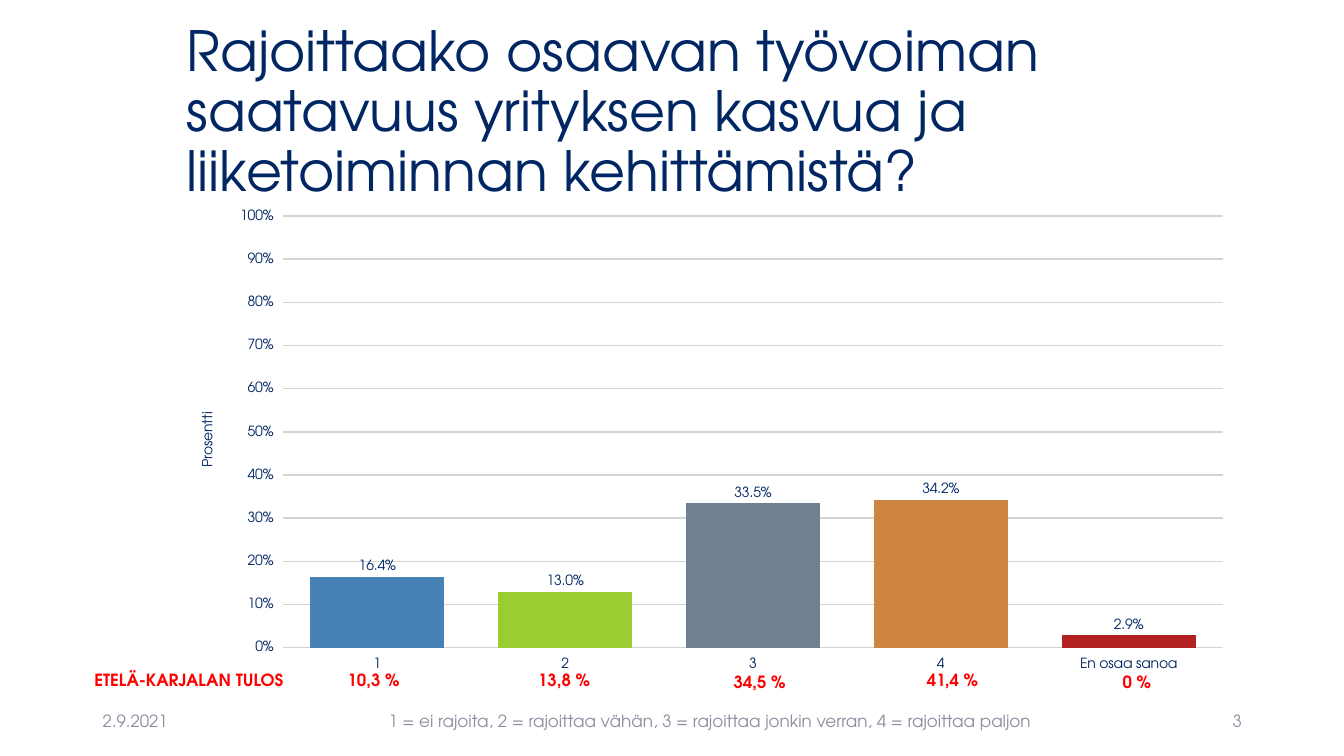
from lxml import etree
from pptx import Presentation
from pptx import util as u
from pptx.chart.data import CategoryChartData
from pptx.dml.color import RGBColor
from pptx.enum import chart as c
from pptx.enum import text as t
from pptx.oxml import ns

FONT = "TeX Gyre Adventor"
COLORS = {"navy": "002663", "footer": "8C8E9F", "result": "FF0000", "grid": "D3D3D3"}
BAR_COLORS = {
    "1": "4682B4",
    "2": "9ACD32",
    "3": "708090",
    "4": "CD853F",
    "En osaa sanoa": "B22222",
}
SHARES = (0.164, 0.13, 0.335, 0.342, 0.029)
REGIONAL_RESULTS = (
    ("ETELÄ-KARJALAN TULOS", 2.13, 16.76, 5.44),
    ("10,3 %", 8.51, 16.76, 2.06),
    ("13,8 %", 13.31, 16.74, 2.06),
    ("34,5 %", 18.24, 16.79, 2.06),
    ("41,4 %", 23.11, 16.74, 2.06),
    ("0 %", 28.04, 16.79, 2.06),
)
FOOTERS = (
    ("2.9.2021", 2.34, 7.62, t.PP_ALIGN.LEFT),
    (
        "1 = ei rajoita, 2 = rajoittaa vähän, 3 = rajoittaa jonkin verran, 4 = rajoittaa paljon",
        8.99, 17.81, t.PP_ALIGN.CENTER,
    ),
    ("3", 23.93, 7.62, t.PP_ALIGN.RIGHT),
)


def style_font(font, size, color, bold=False):
    font.name = FONT
    font.size = u.Pt(size)
    font.bold = bold
    font.color.rgb = RGBColor.from_string(color)


def set_title(slide, words):
    title = slide.shapes.title
    title.left, title.top = u.Cm(4.45), u.Cm(1.02)
    title.width, title.height = u.Cm(26.9), u.Cm(3.68)
    frame = title.text_frame
    frame.text = words
    frame.auto_size = t.MSO_AUTO_SIZE.NONE
    frame.vertical_anchor = t.MSO_ANCHOR.MIDDLE
    paragraph = frame.paragraphs[0]
    paragraph.alignment = t.PP_ALIGN.LEFT
    paragraph.line_spacing = 0.9
    style_font(paragraph.runs[0].font, 39.6, COLORS["navy"])


def add_label(slide, words, left, top, width, height, color, bold=False,
              alignment=t.PP_ALIGN.LEFT, anchor=t.MSO_ANCHOR.TOP):
    box = slide.shapes.add_textbox(u.Cm(left), u.Cm(top), u.Cm(width), u.Cm(height))
    frame = box.text_frame
    frame.word_wrap = True
    frame.vertical_anchor = anchor
    frame.text = words
    paragraph = frame.paragraphs[0]
    paragraph.alignment = alignment
    style_font(paragraph.runs[0].font, 12, color, bold)


def set_plot_layout(chart, **fractions):
    plot_area = chart.plots[0]._element.getparent()
    for old_layout in plot_area.findall(ns.qn("c:layout")):
        plot_area.remove(old_layout)
    layout = etree.Element(ns.qn("c:layout"))
    plot_area.insert(0, layout)
    manual = etree.SubElement(layout, ns.qn("c:manualLayout"))
    settings = {"layoutTarget": "inner", "xMode": "edge", "yMode": "edge", **fractions}
    for name, value in settings.items():
        etree.SubElement(manual, ns.qn(f"c:{name}")).set("val", str(value))


def style_axes(chart):
    for axis in (chart.category_axis, chart.value_axis):
        axis.major_tick_mark = c.XL_TICK_MARK.OUTSIDE
        axis.format.line.fill.background()
        style_font(axis.tick_labels.font, 10, COLORS["navy"])
    axis = chart.value_axis
    axis.minimum_scale, axis.maximum_scale, axis.major_unit = 0, 1, 0.1
    axis.tick_labels.number_format = "0%"
    axis.tick_labels.number_format_is_linked = False
    grid = axis.major_gridlines.format.line
    grid.width = u.Pt(1)
    grid.color.rgb = RGBColor.from_string(COLORS["grid"])
    frame = axis.axis_title.text_frame
    frame.text = "Prosentti"
    style_font(frame.paragraphs[0].runs[0].font, 10, COLORS["navy"])


def style_bars(plot):
    plot.gap_width = 40
    plot.vary_by_categories = False
    plot.has_data_labels = True
    labels = plot.data_labels
    labels.show_value = True
    labels.number_format = "0.0%"
    labels.number_format_is_linked = False
    labels.position = c.XL_LABEL_POSITION.OUTSIDE_END
    style_font(labels.font, 10, COLORS["navy"])
    for index, color in enumerate(BAR_COLORS.values()):
        fill = plot.series[0].points[index].format.fill
        fill.solid()
        fill.fore_color.rgb = RGBColor.from_string(color)


def add_share_chart(slide):
    data = CategoryChartData()
    data.categories = list(BAR_COLORS)
    data.add_series("Series 1", SHARES)
    chart = slide.shapes.add_chart(
        c.XL_CHART_TYPE.COLUMN_CLUSTERED,
        u.Cm(4.45), u.Cm(5.08), u.Cm(26.9), u.Cm(12.09), data,
    ).chart
    chart.has_legend = False
    chart.has_title = False
    style_font(chart.font, 18, COLORS["navy"])
    style_axes(chart)
    style_bars(chart.plots[0])
    set_plot_layout(chart, x=0.1, y=0.03, w=0.88, h=0.9)


def main():
    presentation = Presentation()
    presentation.slide_width, presentation.slide_height = u.Cm(33.87), u.Cm(19.05)
    slide = presentation.slides.add_slide(presentation.slide_layouts[5])
    set_title(slide, "Rajoittaako osaavan työvoiman saatavuus yrityksen kasvua "
                     "ja liiketoiminnan kehittämistä?")
    for words, left, width, alignment in FOOTERS:
        add_label(slide, words, left, 17.65, width, 1.02, COLORS["footer"],
                  alignment=alignment, anchor=t.MSO_ANCHOR.MIDDLE)
    add_share_chart(slide)
    for words, left, top, width in REGIONAL_RESULTS:
        add_label(slide, words, left, top, width, 0.76, COLORS["result"], bold=True)
    presentation.save("out.pptx")


if __name__ == "__main__":
    main()
